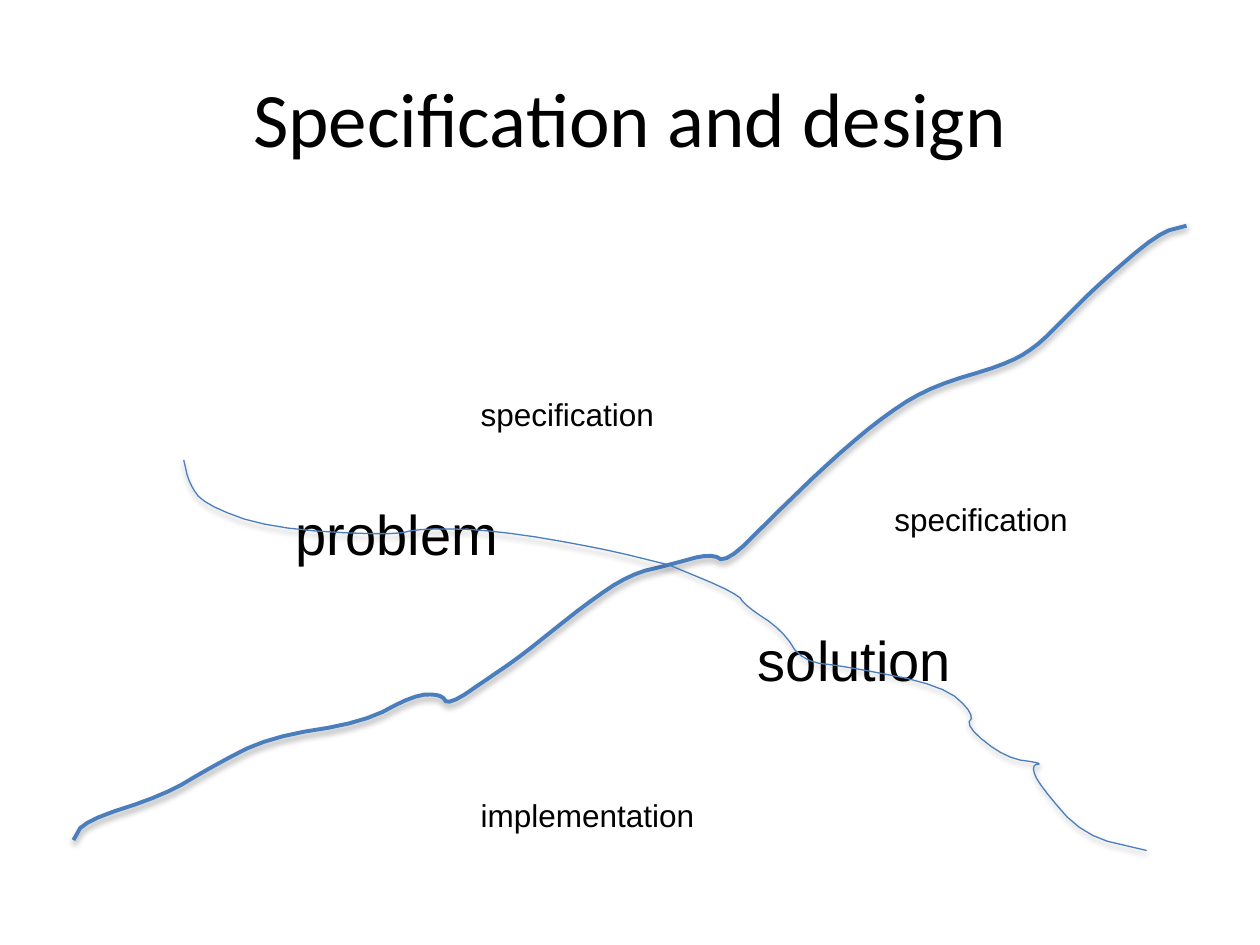
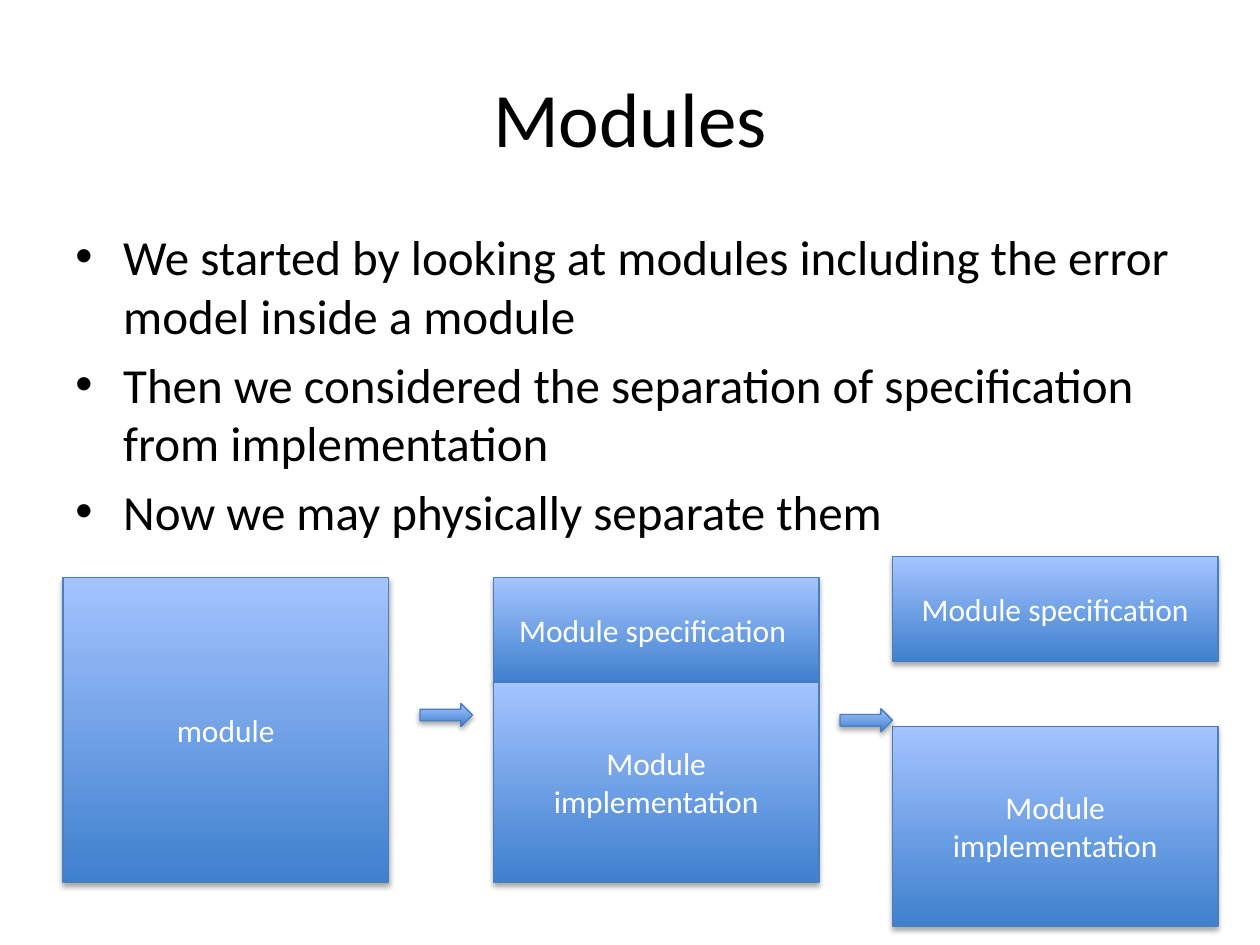
"""Build two slides on specification, design and the separation of modules."""
from itertools import pairwise

from lxml import etree
from pptx import Presentation, util as u
from pptx.dml.color import RGBColor
from pptx.enum import shapes, text
from pptx.oxml.ns import qn

BLACK = RGBColor(0x00, 0x00, 0x00)
WHITE = RGBColor(0xFF, 0xFF, 0xFF)
EDGE = RGBColor(0x4B, 0x7E, 0xBC)
DEEP = RGBColor(0x3F, 0x80, 0xCE)
PALE = RGBColor(0xA4, 0xC4, 0xFF)
HEADING_FONT, LABEL_FONT = "Calibri", "Arial"
LEFT, CENTER = text.PP_ALIGN.LEFT, text.PP_ALIGN.CENTER

CELL = u.Inches(1) / 12
COLUMNS, ROWS = 120, 90
MARGIN = 6
CONTENT_WIDTH = COLUMNS - 2 * MARGIN
TITLE_AREA = (MARGIN, 3.6, CONTENT_WIDTH, 15)
BODY_AREA = (MARGIN, 21, CONTENT_WIDTH, 29)
THIN, THICK = 0.75, 2.25
CURVE_STEPS = 100
SMOOTHING_ROUNDS = 2

DESIGN_TITLE = "Specification and design"
LABEL_HEIGHTS = {32: 7.7, 18: 4.8}
DESIGN_LABELS = [
    ("problem", 32, 27, 47, 21.8),
    ("solution", 32, 71, 59, 21),
    ("specification", 18, 84, 47, 19.1),
    ("implementation", 18, 44.6, 75.2, 22.9),
    ("specification", 18, 44.6, 37, 19.1),
]
CROSSING = (63.7, 53.8)
DIVIDE_ABOVE = [
    (113, 21.5), (110.3, 22.2), (104.5, 27.2), (101.5, 30.2), (98.5, 33.2), (95.5, 34.8),
    (89, 36.7), (84.7, 39.2), (79.4, 43.6), (73.6, 49.2), (69.2, 53.6), (67.7, 52.7),
]
DIVIDE_BELOW = [
    (60, 54.7), (55.8, 57.5), (49.6, 62.5), (46.8, 64.4), (42.7, 67.2), (42, 66.1),
    (39.4, 66.2), (34.6, 68.8), (25.6, 70.2), (20, 73.1), (15.7, 75.7), (8, 78.2), (7, 80),
]
TO_PROBLEM = [
    (57.2, 52.2), (47.3, 50.5), (40.2, 50.3), (37.2, 51),
    (25.6, 50.3), (19.4, 48), (18, 46), (17.5, 43.8),
]
TO_SOLUTION = [
    (70.2, 56.5), (71, 57.7), (74.5, 60), (76.4, 63), (80.8, 63.5), (89.8, 65.3),
    (92.8, 68), (92, 69.2), (95.8, 72.2), (99.4, 72.7), (98.2, 72.9), (99, 74.8),
    (103.2, 79.6), (109.2, 81),
]
CURVES = [
    (DIVIDE_ABOVE + [CROSSING] + DIVIDE_BELOW, THICK),
    ([CROSSING] + TO_SOLUTION, THIN),
    ([CROSSING] + TO_PROBLEM, THIN),
]

MODULES_TITLE = "Modules"
MODULES_POINTS = [
    "We started by looking at modules including the error model inside a module",
    "Then we considered the separation of specification from implementation",
    "Now we may physically separate them",
]
MODULE_WIDTH, SPEC_HEIGHT, IMPL_HEIGHT = 31, 10, 19
WHOLE = ("module", SPEC_HEIGHT + IMPL_HEIGHT)
SPEC_SPACED = ("Module specification ", SPEC_HEIGHT)
SPEC = ("Module specification", SPEC_HEIGHT)
IMPL = ("Module implementation", IMPL_HEIGHT)
STAGES = [
    {"left": MARGIN, "top": 55, "gap": 0, "parts": [WHOLE]},
    {"left": 47, "top": 55, "gap": 0, "parts": [SPEC_SPACED, IMPL]},
    {"left": 85, "top": 53, "gap": 6.2, "parts": [SPEC, IMPL]},
]
ARROW_SIZE = (5, 2.2)
ARROW_CORNERS = [(40, 67), (80, 67.5)]


def on_grid(area):
    """Turn grid cells into slide lengths."""
    return [round(cells * CELL) for cells in area]


def style_text(paragraph, size, font, color, align):
    """Give a whole paragraph one look."""
    paragraph.alignment = align
    paragraph.font.size = u.Pt(size)
    paragraph.font.name = font
    paragraph.font.color.rgb = color


def add_text(slide, area, lines, size, font, align=LEFT):
    """Add a wrapping text box with one paragraph per line."""
    frame = slide.shapes.add_textbox(*on_grid(area)).text_frame
    frame.word_wrap = True
    frame.text = "\n".join(lines)
    for paragraph in frame.paragraphs:
        style_text(paragraph, size, font, BLACK, align)
    return frame


def add_titled_slide(deck, title):
    """Add a blank slide with the shared title."""
    slide = deck.slides.add_slide(deck.slide_layouts[6])
    frame = add_text(slide, TITLE_AREA, [title], 44, HEADING_FONT, CENTER)
    frame.vertical_anchor = text.MSO_ANCHOR.MIDDLE
    return slide


def outline(shape, width):
    """Give a shape the shared edge colour and soft shadow."""
    shape.line.color.rgb = EDGE
    shape.line.width = u.Pt(width)
    shape.shadow.inherit = False
    effects = shape.element.spPr.find(qn("a:effectLst"))
    shadow = etree.SubElement(effects, qn("a:outerShdw"), blurRad=str(u.Pt(3.1)),
                              dist=str(u.Pt(1.8)), dir="5400000", rotWithShape="0")
    tint = etree.SubElement(shadow, qn("a:srgbClr"), val=str(BLACK))
    etree.SubElement(tint, qn("a:alpha"), val="35000")


def between(start, end, share):
    """Find the point a share of the way from start to end."""
    return tuple(a + (b - a) * share for a, b in zip(start, end))


def smooth(waypoints):
    """Round a path by cutting a quarter off both ends of each segment."""
    for _ in range(SMOOTHING_ROUNDS):
        cuts = [between(start, end, share)
                for start, end in pairwise(waypoints) for share in (0.25, 0.75)]
        waypoints = [waypoints[0], *cuts, waypoints[-1]]
    return waypoints


def add_curve(slide, waypoints, width):
    """Draw an open, smoothed path through grid waypoints."""
    start, *rest = [(x * CURVE_STEPS, y * CURVE_STEPS) for x, y in smooth(waypoints)]
    builder = slide.shapes.build_freeform(*start, scale=CELL / CURVE_STEPS)
    builder.add_line_segments(rest, close=False)
    curve = builder.convert_to_shape()
    curve.fill.background()
    outline(curve, width)


def add_block(parent, preset, area):
    """Add a shape shaded from pale at the top to deep at the bottom."""
    block = parent.shapes.add_shape(preset, *on_grid(area))
    block.fill.gradient()
    block.fill.gradient_angle = 90
    for stop, color in zip(block.fill.gradient_stops, (DEEP, PALE)):
        stop.color.rgb = color
    outline(block, THIN)
    return block


def add_module(parent, label, area):
    """Add a labelled module box."""
    frame = add_block(parent, shapes.MSO_SHAPE.RECTANGLE, area).text_frame
    frame.word_wrap = True
    frame.vertical_anchor = text.MSO_ANCHOR.MIDDLE
    frame.text = label
    style_text(frame.paragraphs[0], 18, HEADING_FONT, WHITE, CENTER)


def add_stage(slide, left, top, gap, parts):
    """Stack the parts of one stage downwards, grouped when there are several."""
    parent = slide.shapes.add_group_shape() if len(parts) > 1 else slide
    for label, height in parts:
        add_module(parent, label, (left, top, MODULE_WIDTH, height))
        top += height + gap


def add_bullet(paragraph):
    """Hang a paragraph behind a round bullet."""
    paragraph.space_before = u.Pt(5.6)
    props = paragraph._p.get_or_add_pPr()
    props.set("marL", str(u.Inches(0.38)))
    props.set("indent", str(-u.Inches(0.38)))
    run_defaults = props.find(qn("a:defRPr"))
    run_defaults.addprevious(etree.Element(qn("a:buFont"), typeface=LABEL_FONT))
    run_defaults.addprevious(etree.Element(qn("a:buChar"), char="•"))


def build_design(deck):
    """Show problem and solution on either side of the divide."""
    slide = add_titled_slide(deck, DESIGN_TITLE)
    divide, *streams = CURVES
    add_curve(slide, *divide)
    for label, size, left, top, width in DESIGN_LABELS:
        area = (left, top, width, LABEL_HEIGHTS[size])
        frame = add_text(slide, area, [label], size, LABEL_FONT)
        frame.word_wrap = False
        frame.auto_size = text.MSO_AUTO_SIZE.SHAPE_TO_FIT_TEXT
    for stream in streams:
        add_curve(slide, *stream)


def build_modules(deck):
    """Show a module being split in three stages."""
    slide = add_titled_slide(deck, MODULES_TITLE)
    body = add_text(slide, BODY_AREA, MODULES_POINTS, 28, HEADING_FONT)
    for paragraph in body.paragraphs:
        add_bullet(paragraph)
    for stage in STAGES:
        add_stage(slide, **stage)
    for corner in ARROW_CORNERS:
        add_block(slide, shapes.MSO_SHAPE.RIGHT_ARROW, corner + ARROW_SIZE)


def main():
    """Build and save the deck."""
    deck = Presentation()
    deck.slide_width, deck.slide_height = on_grid((COLUMNS, ROWS))
    build_design(deck)
    build_modules(deck)
    deck.save("out.pptx")


if __name__ == "__main__":
    main()
